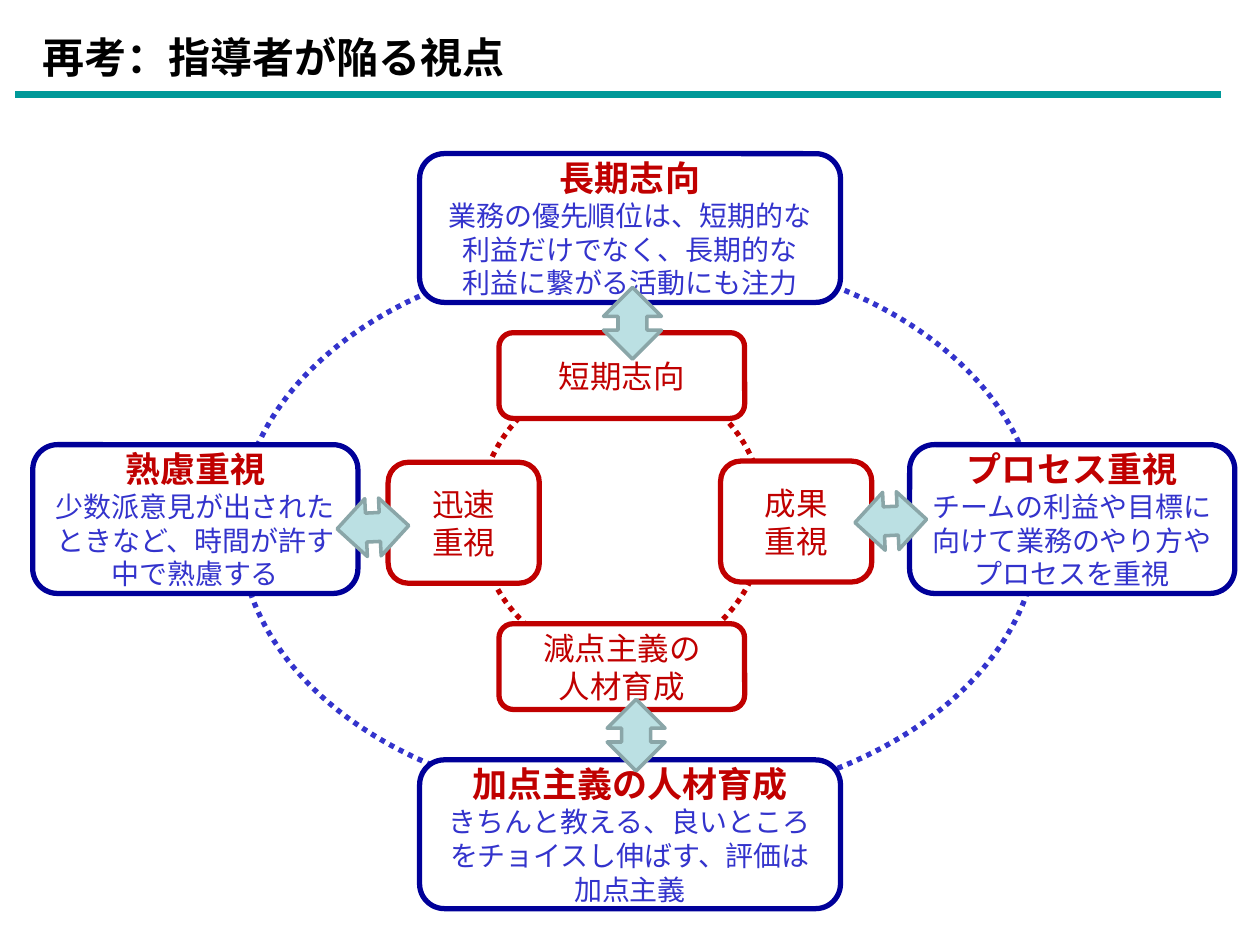
from lxml import etree
from pptx import Presentation
from pptx.dml.color import RGBColor
from pptx.enum.dml import MSO_LINE
from pptx.enum.shapes import MSO_CONNECTOR, MSO_SHAPE
from pptx.enum.text import MSO_ANCHOR, MSO_AUTO_SIZE, PP_ALIGN
from pptx.oxml.ns import qn
from pptx.util import Pt

ELLIPSE = MSO_SHAPE.OVAL
ROUNDED = MSO_SHAPE.ROUNDED_RECTANGLE
TWO_WAY = MSO_SHAPE.UP_DOWN_ARROW
STRAIGHT = MSO_CONNECTOR.STRAIGHT
DOTTED = MSO_LINE.ROUND_DOT
MIDDLE = MSO_ANCHOR.MIDDLE
CENTER = PP_ALIGN.CENTER
LEFT = PP_ALIGN.LEFT
GROW = MSO_AUTO_SIZE.SHAPE_TO_FIT_TEXT

FONT = "Noto Sans CJK JP"
COLORS = {
    "title": "000000",
    "rule": "009999",
    "ideal": "000099",
    "detail": "3333CC",
    "pitfall": "C00000",
    "paper": "FFFFFF",
    "arrow": "BBE0E3",
    "arrow_edge": "8AA6A8",
}
FORMATS = {
    "title": {"size": Pt(24), "bold": True},
    "heading": {"size": Pt(20), "bold": True},
    "detail": {"size": Pt(16), "bold": False},
    "pitfall": {"size": Pt(18), "bold": False},
}

IDEALS = [
    (0, 166.3, 185.8, "熟慮重視",
     ["少数派意見が出されたときなど、時間が許す中で熟慮する"]),
    (501.1, 166.3, 185.8, "プロセス重視",
     ["チームの利益や目標に", "向けて業務のやり方や", "プロセスを重視"]),
    (221.1, 346.4, 240.5, "加点主義の人材育成",
     ["きちんと教える、良いところをチョイスし伸ばす、評価は加点主義"]),
    (221.1, 0, 240.5, "長期志向",
     ["業務の優先順位は、短期的な利益だけでなく、長期的な", "利益に繋がる活動にも注力"]),
]
PITFALLS = [
    (266.4, 102.3, 140.4, 49, ["短期志向"]),
    (266.4, 268.6, 140.4, 49, ["減点主義の", "人材育成"]),
    (203.1, 176.4, 86.4, 69.1, ["迅速", "重視"]),
    (393.1, 175.7, 86.4, 69.1, ["成果", "重視"]),
]
ARROWS = [
    (326.2, 76.4, 0),
    (328.3, 311.8, 0),
    (473.8, 189.4, 267.4),
    (177.9, 193, 267.4),
]


def rgb(name):
    return RGBColor.from_string(COLORS[name])


def add_outlined(slide, preset, box, edge, weight, fill=None):
    outlined = slide.shapes.add_shape(preset, *map(Pt, box))
    outlined.shadow.inherit = False
    if fill:
        outlined.fill.solid()
        outlined.fill.fore_color.rgb = rgb(fill)
    else:
        outlined.fill.background()
    outlined.line.color.rgb = rgb(edge)
    outlined.line.width = Pt(weight)
    return outlined


def write_lines(frame, lines, align):
    frame.word_wrap = True
    for index, (words, style, color) in enumerate(lines):
        paragraph = frame.paragraphs[0] if index == 0 else frame.add_paragraph()
        paragraph.alignment = align
        run = paragraph.add_run()
        run.text = words
        for attribute, value in FORMATS[style].items():
            setattr(run.font, attribute, value)
        run.font.color.rgb = rgb(color)
        run.font.name = FONT
        east_asian = etree.SubElement(run.font._element, qn("a:ea"))
        east_asian.set("typeface", FONT)


def add_card(slide, box, edge, lines):
    card = add_outlined(slide, ROUNDED, box, edge, 3, "paper")
    card.text_frame.vertical_anchor = MIDDLE
    write_lines(card.text_frame, lines, CENTER)


def add_header(slide, left, top, width, height):
    title = slide.shapes.add_textbox(Pt(left + 8.7), Pt(top), Pt(571.7), Pt(height))
    write_lines(title.text_frame, [("再考：指導者が陥る視点", "title", "title")], LEFT)
    title.text_frame.auto_size = GROW
    rule_y = Pt(top + 39.6)
    rule = slide.shapes.add_connector(STRAIGHT, Pt(left), rule_y, Pt(left + width), rule_y)
    rule.line.color.rgb = rgb("rule")
    rule.line.width = Pt(4.5)
    etree.SubElement(rule._element.spPr, qn("a:effectLst"))


def add_viewpoints(slide, left, top):
    rings = [
        (118.1, 55.5, 456.5, 316.8, "detail"),
        (254.9, 126, 163.4, 164.2, "pitfall"),
    ]
    for x, y, width, height, edge in rings:
        ring = add_outlined(slide, ELLIPSE, (left + x, top + y, width, height), edge, 3)
        ring.line.dash_style = DOTTED
    for x, y, width, heading, details in IDEALS:
        lines = [(heading, "heading", "pitfall")]
        lines += [(detail, "detail", "detail") for detail in details]
        add_card(slide, (left + x, top + y, width, 85), "ideal", lines)
    for x, y, width, height, words in PITFALLS:
        lines = [(word, "pitfall", "pitfall") for word in words]
        add_card(slide, (left + x, top + y, width, height), "pitfall", lines)
    for x, y, turn in ARROWS:
        arrow = add_outlined(slide, TWO_WAY, (left + x, top + y, 33.1, 41),
                             "arrow_edge", 2, "arrow")
        arrow.rotation = turn


def main():
    deck = Presentation()
    deck.slide_width = Pt(720)
    deck.slide_height = Pt(540)
    slide = deck.slides.add_slide(deck.slide_layouts[6])
    add_viewpoints(slide, 18.7, 87.8)
    add_header(slide, 8.6, 14.4, 689, 36)
    deck.save("out.pptx")


if __name__ == "__main__":
    main()
